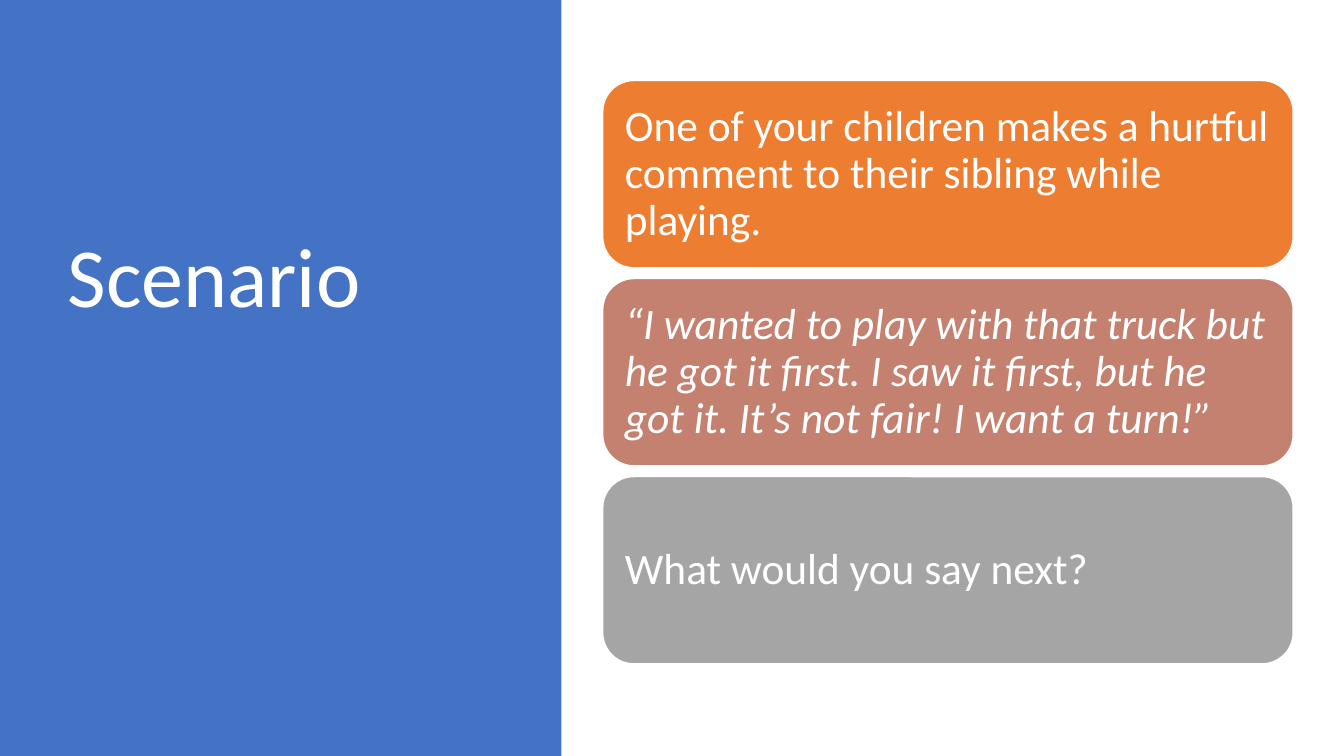
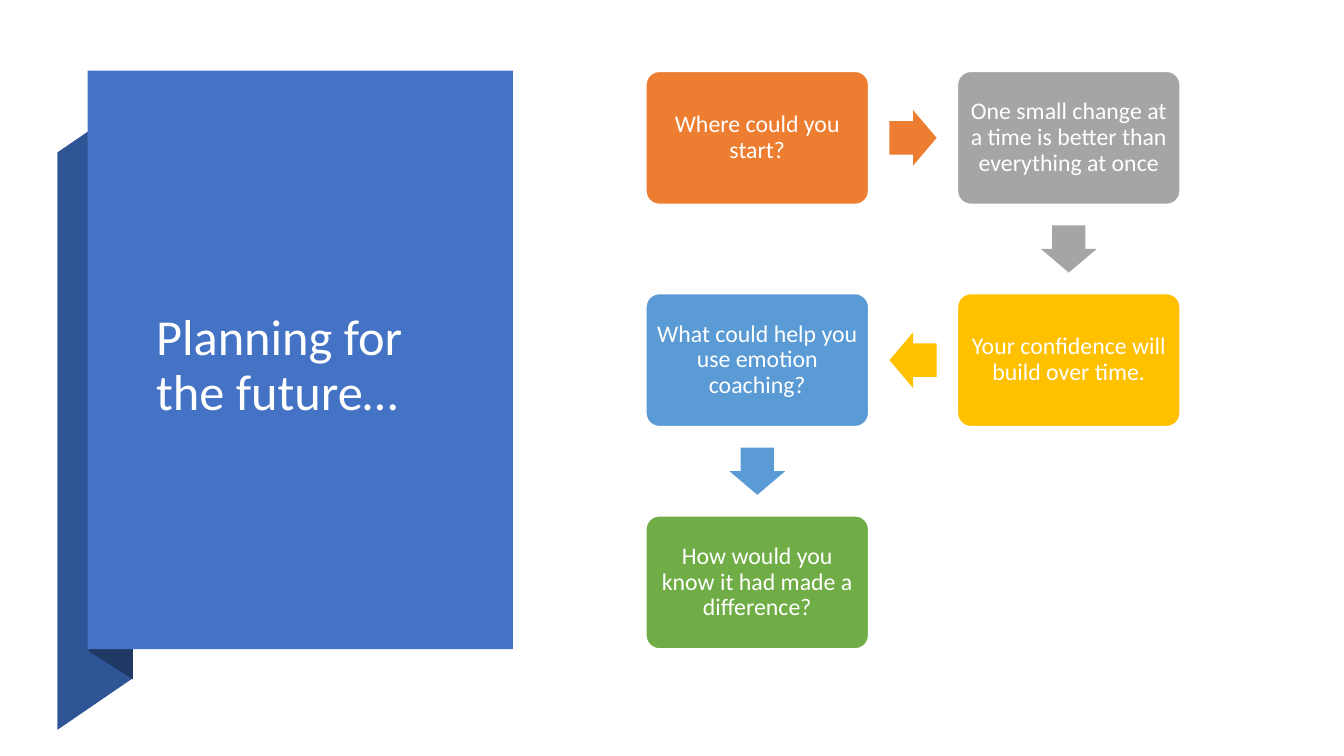
from math import atan2, degrees

from pptx import Presentation
from pptx.dml.color import RGBColor
from pptx.enum.shapes import MSO_SHAPE as Preset
from pptx.enum.text import MSO_ANCHOR as Anchor, MSO_AUTO_SIZE as AutoSize, PP_ALIGN as Align
from pptx.util import Cm, Pt

WHITE = RGBColor(0xFF, 0xFF, 0xFF)
BLUE = RGBColor(0x44, 0x72, 0xC4)
DARK_BLUE = RGBColor(0x2F, 0x55, 0x97)
NAVY = RGBColor(0x20, 0x38, 0x64)
ORANGE = RGBColor(0xED, 0x7D, 0x31)
ROSE = RGBColor(0xC4, 0x81, 0x70)
GRAY = RGBColor(0xA5, 0xA5, 0xA5)
YELLOW = RGBColor(0xFF, 0xC0, 0x00)
LIGHT_BLUE = RGBColor(0x5B, 0x9B, 0xD5)
GREEN = RGBColor(0x70, 0xAD, 0x47)

TITLE_ONLY = 5
FRAME_FORMAT = {"word_wrap": True, "auto_size": AutoSize.NONE, "vertical_anchor": Anchor.MIDDLE}


def paint(shape, colour, outlined=False):
    shape.shadow.inherit = False
    shape.fill.solid()
    shape.fill.fore_color.rgb = colour
    if outlined:
        shape.line.color.rgb = WHITE
        shape.line.width = Pt(1)
    else:
        shape.line.fill.background()


def write(shape, text, size, margin=None, align=Align.LEFT, italic=False):
    frame = shape.text_frame
    frame.text = text
    paragraph = frame.paragraphs[0]
    font_format = {"name": "Calibri", "size": Pt(size), "italic": italic}
    paragraph_format = {"alignment": align, "line_spacing": 0.9, "space_before": Pt(0)}
    margins = {}
    if margin is not None:
        margins = {f"margin_{side}": Cm(margin) for side in ("left", "top", "right", "bottom")}
    for target, values in (
        (frame, FRAME_FORMAT | margins),
        (paragraph, paragraph_format),
        (paragraph.font, font_format),
    ):
        for name, value in values.items():
            setattr(target, name, value)
    paragraph.font.color.rgb = WHITE


presentation = Presentation()
presentation.slide_width = Cm(33.87)
presentation.slide_height = Cm(19.05)

slides = []
for title_text, title_size, title_box, panel_box in (
    ("Scenario", 60, (1.45, 1.73, 10.57, 10.64), (0, 0, 14.15, 19.05)),
    ("Planning for the future…", 36, (3.68, 4.24, 7.65, 10), (2.21, 1.78, 10.72, 14.58)),
):
    slide = presentation.slides.add_slide(presentation.slide_layouts[TITLE_ONLY])
    panel = slide.shapes.add_shape(Preset.RECTANGLE, *map(Cm, panel_box))
    paint(panel, BLUE)
    title = slide.shapes.title
    title.left, title.top, title.width, title.height = map(Cm, title_box)
    write(title, title_text, title_size)
    panel.element.addnext(title.element)
    slides.append((slide, panel))

scenario_slide, _ = slides[0]
scenario_steps = (
    ("One of your children makes a hurtful comment to their sibling while playing.", ORANGE, False),
    (
        "“I wanted to play with that truck but he got it first. "
        "I saw it first, but he got it. It’s not fair! I want a turn!”",
        ROSE,
        True,
    ),
    ("What would you say next?", GRAY, False),
)
for row, (text, colour, italic) in enumerate(scenario_steps):
    card = scenario_slide.shapes.add_shape(
        Preset.ROUNDED_RECTANGLE, Cm(15.19), Cm(2.03 + 4.99 * row), Cm(17.4), Cm(4.72)
    )
    paint(card, colour, outlined=True)
    write(card, text, 31, margin=0.33, italic=italic)

planning_slide, planning_panel = slides[1]
ribbon_parts = (
    (DARK_BLUE, ((1.45, 18.39), (3.35, 17.09), (3.35, 2.54), (1.45, 3.84))),
    (NAVY, ((2.24, 16.41), (3.35, 17.12), (3.35, 2.51), (2.24, 1.78))),
)
for colour, corners in ribbon_parts:
    start, *others = [(Cm(x), Cm(y)) for x, y in corners]
    builder = planning_slide.shapes.build_freeform(*start)
    builder.add_line_segments(others, close=True)
    ribbon = builder.convert_to_shape()
    paint(ribbon, colour)
    planning_panel.element.addprevious(ribbon.element)

CARD_WIDTH, CARD_HEIGHT = 5.61, 3.35
COLUMN_STEP, ROW_STEP = 7.85, 5.6
ARROW_LENGTH, ARROW_BREADTH = 1.19, 1.4
planning_steps = (
    ("Where could you start?", ORANGE, 0, 0),
    ("One small change at a time is better than everything at once", GRAY, 1, 0),
    ("Your confidence will build over time.", YELLOW, 1, 1),
    ("What could help you use emotion coaching?", LIGHT_BLUE, 0, 1),
    ("How would you know it had made a difference?", GREEN, 0, 2),
)
for index, (text, colour, column, row) in enumerate(planning_steps):
    left = 16.28 + COLUMN_STEP * column
    top = 1.8 + ROW_STEP * row
    card = planning_slide.shapes.add_shape(
        Preset.ROUNDED_RECTANGLE, Cm(left), Cm(top), Cm(CARD_WIDTH), Cm(CARD_HEIGHT)
    )
    card.adjustments[0] = 0.1
    paint(card, colour, outlined=True)
    write(card, text, 17, margin=0.18, align=Align.CENTER)
    if index + 1 < len(planning_steps):
        _, _, next_column, next_row = planning_steps[index + 1]
        across, down = next_column - column, next_row - row
        center_x = left + (CARD_WIDTH + across * COLUMN_STEP) / 2
        center_y = top + (CARD_HEIGHT + down * ROW_STEP) / 2
        arrow = planning_slide.shapes.add_shape(
            Preset.RIGHT_ARROW,
            Cm(center_x - ARROW_LENGTH / 2),
            Cm(center_y - ARROW_BREADTH / 2),
            Cm(ARROW_LENGTH),
            Cm(ARROW_BREADTH),
        )
        arrow.adjustments[0] = 0.6
        arrow.adjustments[1] = 0.5
        arrow.rotation = degrees(atan2(down, across))
        paint(arrow, colour)

presentation.save("out.pptx")
